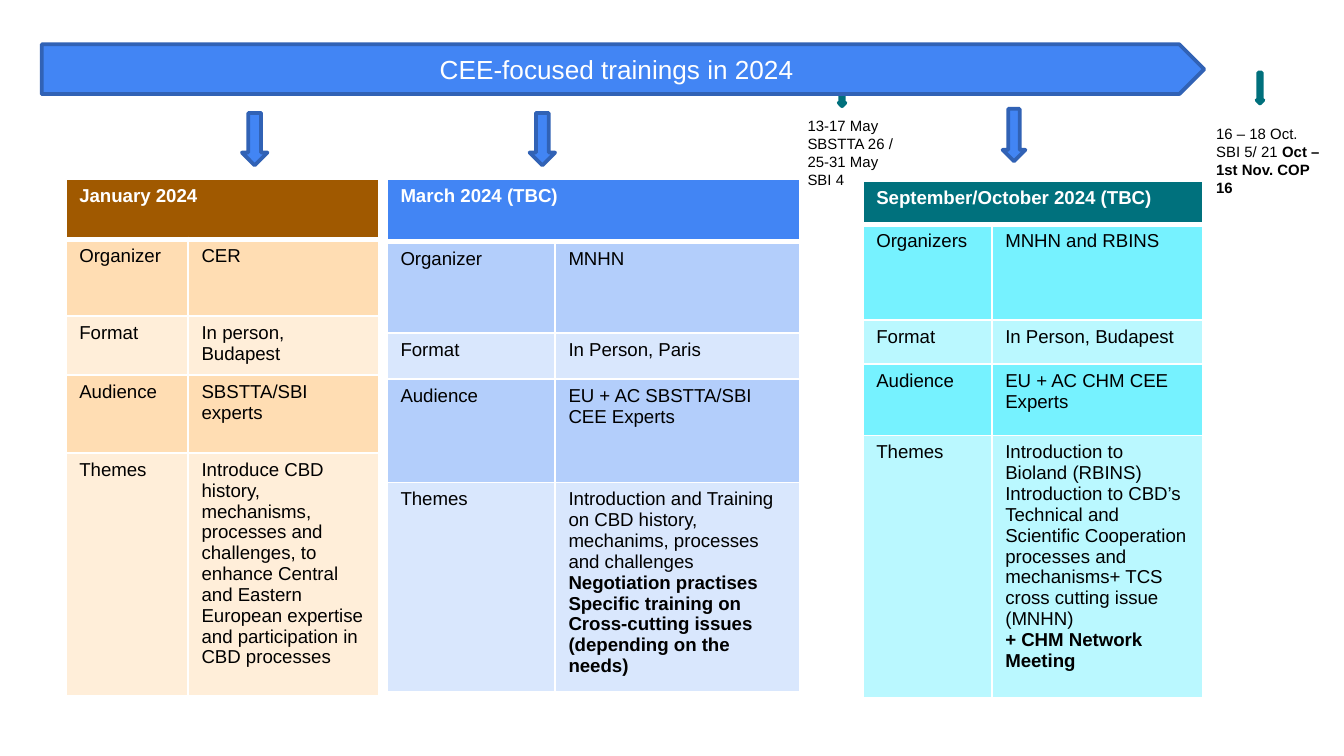
from lxml.etree import SubElement
from pptx import Presentation
from pptx.dml.color import RGBColor
from pptx.enum.shapes import MSO_SHAPE as SHAPE
from pptx.enum.text import MSO_ANCHOR, MSO_AUTO_SIZE, PP_ALIGN
from pptx.oxml.ns import qn
from pptx.util import Inches, Pt

FONT = "Arial"
WHITE = RGBColor(0xFF, 0xFF, 0xFF)
BLACK = RGBColor(0, 0, 0)
BLUE = RGBColor(0x42, 0x85, 0xF4)
BLUE_EDGE = RGBColor(0x31, 0x62, 0xB5)
BLUE_MID = RGBColor(0xB3, 0xCE, 0xFB)
BLUE_PALE = RGBColor(0xD9, 0xE7, 0xFD)
BROWN = RGBColor(0xA0, 0x59, 0x00)
ORANGE_MID = RGBColor(0xFF, 0xDD, 0xB3)
ORANGE_PALE = RGBColor(0xFF, 0xEE, 0xD9)
TEAL = RGBColor(0x00, 0x71, 0x7D)
TEAL_EDGE = RGBColor(0x00, 0x70, 0x7C)
TEAL_ARROW = RGBColor(0x00, 0x97, 0xA7)
CYAN_MID = RGBColor(0x76, 0xF2, 0xFF)
CYAN_PALE = RGBColor(0xBA, 0xF8, 0xFF)

# Each training: left, top, column widths, row heights, (header, mid, pale), title, rows.
# Every row holds a label and its paragraphs as (text, bold).
TRAININGS = [
    (2.88, 1.33, (1.25, 1.82), (0.47, 0.68, 0.34, 0.77, 1.56),
     (BLUE, BLUE_MID, BLUE_PALE), "March 2024 (TBC)", [
        ("Organizer", [("MNHN", False)]),
        ("Format", [("In Person, Paris", False)]),
        ("Audience", [("EU + AC SBSTTA/SBI CEE Experts", False)]),
        ("Themes", [
            ("Introduction and Training on CBD history, mechanims, "
             "processes and challenges", False),
            ("Negotiation practises", True),
            ("Specific training on Cross-cutting issues", True),
            ("(depending on the needs)", True)])]),
    (0.49, 1.33, (0.91, 1.42), (0.45, 0.57, 0.44, 0.58, 1.81),
     (BROWN, ORANGE_MID, ORANGE_PALE), "January 2024", [
        ("Organizer", [("CER", False)]),
        ("Format", [("In person, Budapest", False)]),
        ("Audience", [("SBSTTA/SBI experts", False)]),
        ("Themes", [
            ("Introduce CBD history, mechanisms, processes and challenges, "
             "to enhance Central and Eastern European expertise and "
             "participation in CBD processes", False)])]),
    (6.42, 1.35, (0.96, 1.57), (0.32, 0.71, 0.33, 0.53, 1.95),
     (TEAL, CYAN_MID, CYAN_PALE), "September/October 2024 (TBC)", [
        ("Organizers", [("MNHN and RBINS", False)]),
        ("Format", [("In Person, Budapest", False)]),
        ("Audience", [("EU + AC CHM CEE Experts", False)]),
        ("Themes", [
            ("Introduction to Bioland (RBINS)", False),
            ("Introduction to CBD’s Technical and Scientific Cooperation "
             "processes and mechanisms+ TCS cross cutting issue (MNHN)", False),
            ("+ CHM Network Meeting", True)])]),
]

TRAINING_ARROWS = [(1.8, 0.84, 0.19, 0.39), (3.94, 0.84, 0.19, 0.39),
                   (7.46, 0.81, 0.17, 0.39)]


def set_font(font, size, color, bold=False):
    font.name, font.size, font.bold = FONT, Pt(size), bold
    font.color.rgb = color


def add_block(s, kind, box, fill, edge):
    sp = s.shapes.add_shape(kind, *map(Inches, box))
    sp.shadow.inherit = False
    sp.fill.solid()
    sp.fill.fore_color.rgb = fill
    sp.line.color.rgb = edge
    sp.line.width = Pt(2)
    return sp


def add_banner(s, box):
    """Timeline arrow with the slide title on top of it."""
    add_block(s, SHAPE.PENTAGON, box, BLUE, BLUE_EDGE)
    left, top, width, height = box
    title = s.shapes.title
    title.left, title.top = Inches(left), Inches(top)
    title.width, title.height = Inches(width - height / 4), Inches(height)
    s.shapes._spTree.append(title._element)  # bring to front
    tf = title.text_frame
    tf.auto_size = MSO_AUTO_SIZE.NONE
    tf.vertical_anchor = MSO_ANCHOR.MIDDLE
    tf.margin_top = tf.margin_bottom = 0
    p = tf.paragraphs[0]
    p.text = "CEE-focused trainings in 2024"
    p.alignment = PP_ALIGN.CENTER
    set_font(p.font, 14, WHITE)


def add_note(s, box, runs):
    tf = s.shapes.add_textbox(*map(Inches, box)).text_frame
    tf.word_wrap = True
    p = tf.paragraphs[0]
    for text, bold in runs:
        r = p.add_run()
        r.text = text
        set_font(r.font, 8, BLACK, bold)


def style_cell(cell, fill, paragraphs, color, top=1, bottom=1):
    tc_pr = cell._tc.get_or_add_tcPr()
    for side, width in (("L", 1), ("R", 1), ("T", top), ("B", bottom)):
        ln = SubElement(tc_pr, qn(f"a:ln{side}"), w=str(Pt(width)))
        SubElement(SubElement(ln, qn("a:solidFill")), qn("a:srgbClr"), val=str(WHITE))
    cell.fill.solid()
    cell.fill.fore_color.rgb = fill
    tf = cell.text_frame
    for i, (text, bold) in enumerate(paragraphs):
        p = tf.add_paragraph() if i else tf.paragraphs[0]
        p.text = text
        set_font(p.font, 10, color, bold)


def add_training(s, left, top, widths, heights, colors, heading, rows):
    header, *bands = colors
    table = s.shapes.add_table(
        len(heights), len(widths), Inches(left), Inches(top),
        Inches(sum(widths)), Inches(sum(heights))).table
    for column, width in zip(table.columns, widths):
        column.width = Inches(width)
    for row, height in zip(table.rows, heights):
        row.height = Inches(height)
    # Header across both columns, with a thick rule below
    table.cell(0, 0).merge(table.cell(0, 1))
    style_cell(table.cell(0, 0), header, [(heading, True)], WHITE, bottom=3)
    style_cell(table.cell(0, 1), header, [], WHITE, bottom=3)
    # Banded label and value rows
    for i, (label, paragraphs) in enumerate(rows):
        for j, content in enumerate(([(label, False)], paragraphs)):
            style_cell(table.cell(i + 1, j), bands[i % 2], content, BLACK,
                       top=1 if i else 3)


def main():
    prs = Presentation()
    prs.slide_width = Inches(10)
    prs.slide_height = prs.slide_width * 9 // 16
    s = prs.slides.add_slide(prs.slide_layouts[5])

    # Meeting markers, the first tucked behind the banner
    for box in ((6.24, 0.52, 0.05, 0.27), (9.35, 0.54, 0.05, 0.23)):
        add_block(s, SHAPE.DOWN_ARROW, box, TEAL_ARROW, TEAL_EDGE)
    add_banner(s, (0.31, 0.33, 8.65, 0.37))

    # Trainings
    for box in TRAINING_ARROWS:
        add_block(s, SHAPE.DOWN_ARROW, box, BLUE, BLUE_EDGE)
    for training in TRAININGS:
        add_training(s, *training)

    # Meeting dates
    add_note(s, (5.91, 0.82, 0.91, 0.64),
             [("13-17 May SBSTTA 26 / 25-31 May SBI 4", False)])
    add_note(s, (8.95, 0.88, 1.01, 0.64),
             [("16 – 18 Oct. SBI 5/ 21 ", False), ("Oct – 1st Nov. COP 16", True)])
    prs.save("out.pptx")


if __name__ == "__main__":
    main()
